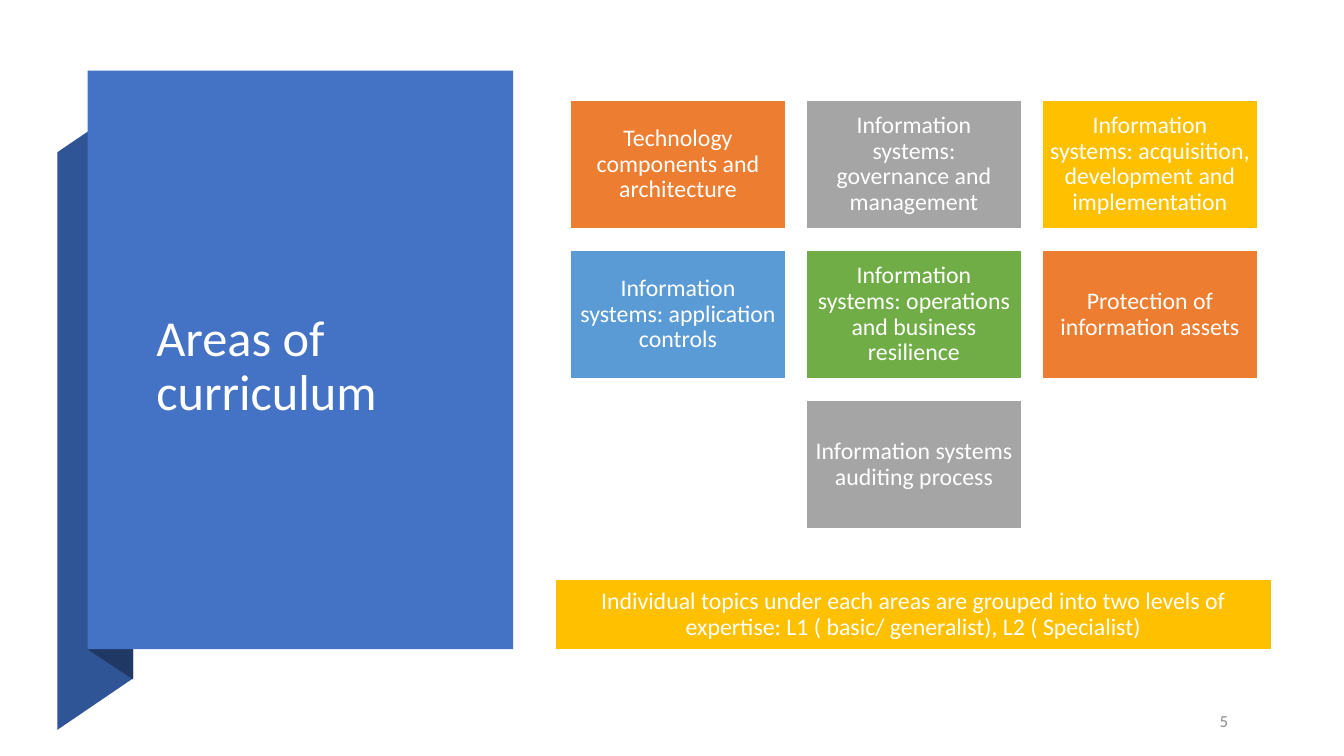
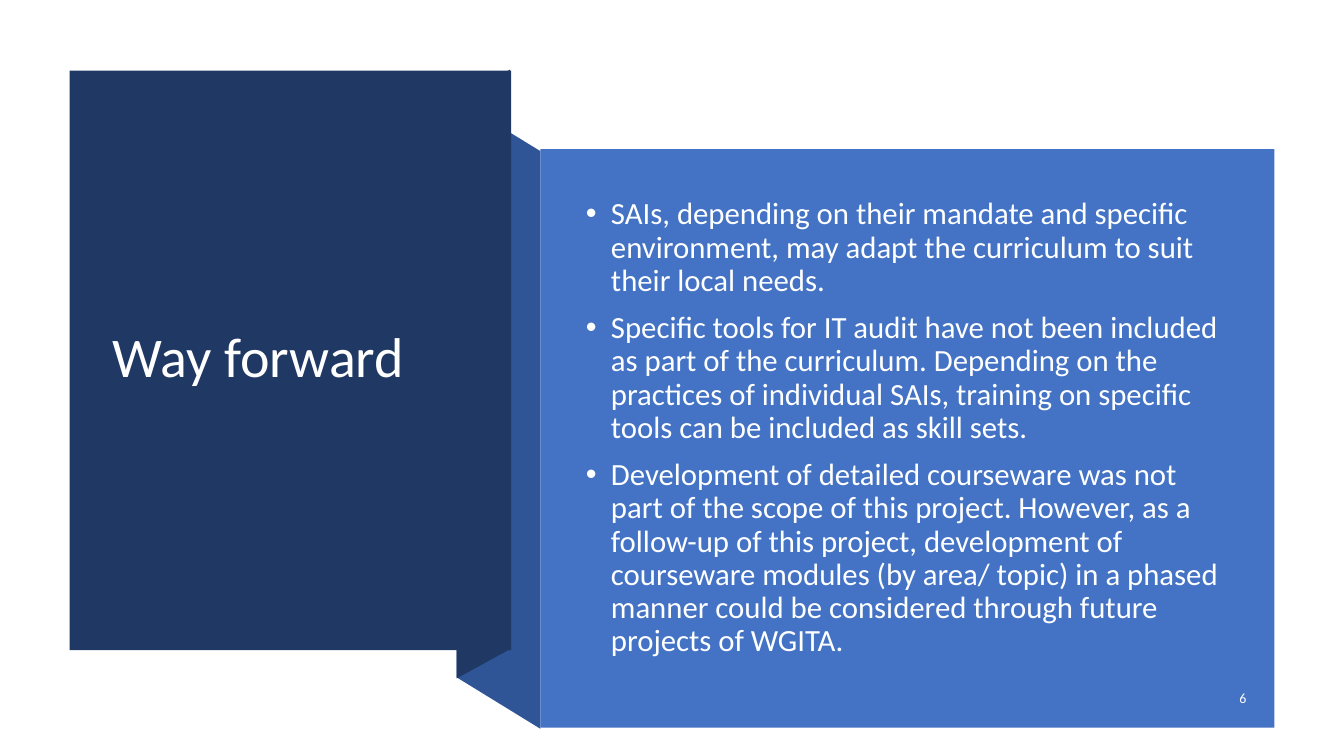
from pptx import Presentation
from pptx import util as u
from pptx.dml import color
from pptx.enum import shapes, text

PX = 9144
FONT = "Calibri"
WHITE, BODY_WHITE, GRAY_TEXT = "FFFFFF", "FEFFFF", "8C8C8C"
BLUE, MID_BLUE, NAVY = "4472C4", "2F5597", "203864"
ORANGE, GRAY, GOLD, SKY, GREEN = "ED7D31", "A5A5A5", "FFC000", "5B9BD5", "70AD47"
TITLE_ONLY, TITLE_AND_CONTENT = 5, 1

AREAS = [
    ("Technology components and architecture", ORANGE),
    ("Information systems: governance and management", GRAY),
    ("Information systems: acquisition, development and implementation", GOLD),
    ("Information systems: application controls", SKY),
    ("Information systems: operations and business resilience", GREEN),
    ("Protection of information assets", ORANGE),
    ("Information systems auditing process", GRAY),
]
LEVELS = ("Individual topics under each areas are grouped into two levels of "
          "expertise: L1 ( basic/ generalist), L2 ( Specialist)")
STEPS = [
    "SAIs, depending on their mandate and specific environment, may adapt the "
    "curriculum to suit their local needs.",
    "Specific tools for IT audit have not been included as part of the curriculum. "
    "Depending on the practices of individual SAIs, training on specific tools can "
    "be included as skill sets.",
    "Development of detailed courseware was not part of the scope of this project. "
    "However, as a follow-up of this project, development of courseware modules "
    "(by area/ topic) in a phased manner could be considered through future "
    "projects of WGITA.",
]


def emu(*lengths):
    return [u.Emu(length * PX) for length in lengths]


def rgb(value):
    return color.RGBColor.from_string(value)


def paint(shape, fill, line=None):
    shape.shadow.inherit = False
    shape.fill.solid()
    shape.fill.fore_color.rgb = rgb(fill)
    if line:
        shape.line.color.rgb = rgb(line)
        shape.line.width = u.Pt(1)
    else:
        shape.line.fill.background()


def format_text(shape, size, ink, align=text.PP_ALIGN.LEFT, spacing=0.9, before=0, after=0):
    frame = shape.text_frame
    frame.word_wrap = True
    frame.auto_size = text.MSO_AUTO_SIZE.NONE
    frame.vertical_anchor = text.MSO_ANCHOR.MIDDLE
    for paragraph in frame.paragraphs:
        paragraph.alignment = align
        paragraph.line_spacing = spacing
        paragraph.space_before = u.Pt(before)
        paragraph.space_after = u.Pt(after)
        for run in paragraph.runs:
            run.font.name = FONT
            run.font.size = u.Pt(size)
            run.font.color.rgb = rgb(ink)


def add_panel(slide, box, fill, line=None):
    panel = slide.shapes.add_shape(shapes.MSO_SHAPE.RECTANGLE, *emu(*box))
    paint(panel, fill, line)
    return panel


def add_slanted_band(slide, box, slant, high_on_right, fill):
    left, top, width, height = box
    high_x, low_x = (left + width, left) if high_on_right else (left, left + width)
    builder = slide.shapes.build_freeform(low_x, top + height, scale=PX)
    builder.add_line_segments([
        (high_x, top + height - slant),
        (high_x, top),
        (low_x, top + slant),
    ])
    paint(builder.convert_to_shape(), fill)


def add_ribbon(slide, outer_box, inner_box, outer_high_on_right):
    add_slanted_band(slide, outer_box, 51, outer_high_on_right, MID_BLUE)
    add_slanted_band(slide, inner_box, 29, not outer_high_on_right, NAVY)


def place_on_top(slide, placeholder, box):
    placeholder.left, placeholder.top, placeholder.width, placeholder.height = emu(*box)
    slide.shapes._spTree.append(placeholder._element)


def add_title(slide, box, wording, size):
    title = slide.shapes.title
    place_on_top(slide, title, box)
    title.text_frame.text = wording
    format_text(title, size, WHITE)


def add_page_number(slide, box, number, size, ink):
    page_number = slide.shapes.add_textbox(*emu(*box))
    page_number.text_frame.text = str(number)
    format_text(page_number, size, ink, text.PP_ALIGN.RIGHT, spacing=1.0, after=6)


def add_tile(slide, box, wording, fill):
    tile = add_panel(slide, box, fill, WHITE)
    frame = tile.text_frame
    frame.text = wording
    frame.margin_left, frame.margin_top, frame.margin_right, frame.margin_bottom = emu(7, 7, 7, 7)
    format_text(tile, 17, WHITE, text.PP_ALIGN.CENTER)


def add_area_grid(slide, box, columns=3, gap=21):
    left, top, width, height = box
    rows = -(-len(AREAS) // columns)
    tile_width = (width - gap * (columns - 1)) // columns
    tile_height = (height - gap * (rows - 1)) // rows
    for index, (wording, fill) in enumerate(AREAS):
        row, column = divmod(index, columns)
        in_row = min(columns, len(AREAS) - row * columns)
        indent = (columns - in_row) * (tile_width + gap) // 2
        x = left + indent + column * (tile_width + gap)
        y = top + row * (tile_height + gap)
        add_tile(slide, (x, y, tile_width, tile_height), wording, fill)


def add_bullets(slide, box, items):
    body = slide.placeholders[1]
    place_on_top(slide, body, box)
    body.text_frame.text = "\n".join(items)
    format_text(body, 22, BODY_WHITE, before=10)
    for paragraph in body.text_frame.paragraphs:
        properties = paragraph._p.get_or_add_pPr()
        properties.set("marL", str(25 * PX))
        properties.set("indent", str(-25 * PX))


def add_slide(presentation, layout):
    return presentation.slides.add_slide(presentation.slide_layouts[layout])


def build_areas_slide(presentation):
    slide = add_slide(presentation, TITLE_ONLY)
    add_ribbon(slide, (57, 100, 75, 624), (88, 70, 44, 604), True)
    add_panel(slide, (87, 70, 422, 574), BLUE)
    add_title(slide, (145, 167, 301, 394), "Areas of curriculum", 36)
    add_page_number(slide, (1153, 698, 75, 35), 5, 12, GRAY_TEXT)
    add_area_grid(slide, (566, 99, 681, 426))
    add_tile(slide, (551, 575, 710, 70), LEVELS, GOLD)


def build_way_forward_slide(presentation):
    slide = add_slide(presentation, TITLE_AND_CONTENT)
    add_ribbon(slide, (453, 99, 83, 624), (453, 69, 53, 604), False)
    add_panel(slide, (69, 70, 438, 575), NAVY)
    add_title(slide, (102, 107, 371, 499), "Way forward", 40)
    add_panel(slide, (536, 148, 728, 574), BLUE)
    add_bullets(slide, (571, 188, 651, 474), STEPS)
    add_page_number(slide, (1171, 675, 75, 35), 6, 10, WHITE)


def main():
    presentation = Presentation()
    presentation.slide_width, presentation.slide_height = emu(1333, 750)
    build_areas_slide(presentation)
    build_way_forward_slide(presentation)
    presentation.save("out.pptx")


if __name__ == "__main__":
    main()
